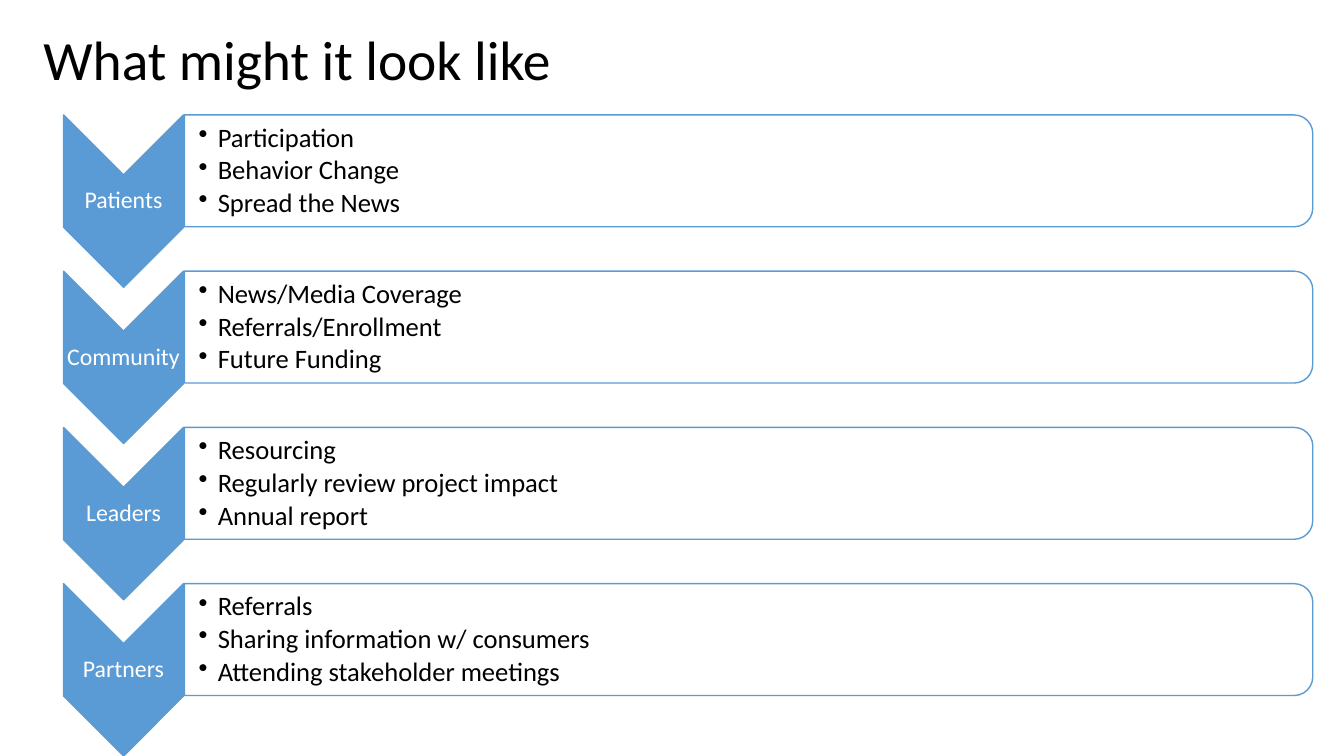
from dataclasses import dataclass

from lxml.etree import SubElement
from pptx import Presentation
from pptx.dml.color import RGBColor
from pptx.enum.shapes import MSO_SHAPE as Preset
from pptx.enum.text import MSO_ANCHOR as Anchor, PP_ALIGN as Align
from pptx.oxml.ns import qn
from pptx.util import Inches, Pt


@dataclass(frozen=True)
class Theme:
    """Colours, font and type sizes of the slide."""
    font: str = "Calibri"
    accent: RGBColor = RGBColor(0x5B, 0x9B, 0xD5)
    white: RGBColor = RGBColor(0xFF, 0xFF, 0xFF)
    black: RGBColor = RGBColor(0, 0, 0)
    title_size: float = 39.6
    label_size: float = 17
    bullet_size: float = 19


THEME = Theme()
ROW_TOP = 1.14
ROW_PITCH = 1.55
AUDIENCES = [
    ("Patients", ["Participation", "Behavior Change", "Spread the News"]),
    ("Community", ["News/Media Coverage", "Referrals/Enrollment", "Future Funding"]),
    ("Leaders", ["Resourcing", "Regularly review project impact", "Annual report"]),
    ("Partners", ["Referrals", "Sharing information w/ consumers",
                  "Attending stakeholder meetings"]),
]


def write_run(paragraph, text, size, color):
    """Add one formatted run to a paragraph."""
    paragraph.line_spacing = 0.9
    run = paragraph.add_run()
    run.text = text
    run.font.name = THEME.font
    run.font.size = Pt(size)
    run.font.color.rgb = color


def set_space_after(paragraph, percent):
    """Set the space after a paragraph as a share of its line."""
    after = SubElement(paragraph._p.get_or_add_pPr(), qn("a:spcAft"))
    SubElement(after, qn("a:spcPct"), val=str(percent * 1000))


def set_bullet(paragraph):
    """Give a paragraph a round bullet with a hanging indent."""
    properties = paragraph._p.get_or_add_pPr()
    indent = Inches(0.19)
    properties.set("marL", str(indent))
    properties.set("indent", str(-indent))
    SubElement(properties, qn("a:buChar"), char="•")


def add_turned_shape(group, preset, left, top, width, height, fill):
    """Add a preset shape turned by 90 degrees, placed by its visible box."""
    shift = (width - height) / 2
    shape = group.shapes.add_shape(preset, Inches(left + shift), Inches(top - shift),
                                   Inches(height), Inches(width))
    shape.rotation = 90
    shape.shadow.inherit = False
    shape.fill.solid()
    shape.fill.fore_color.rgb = fill
    shape.line.color.rgb = THEME.accent
    shape.line.width = Pt(1)
    return shape


def add_text_frame(group, left, top, width, height, left_inset=0.01):
    """Add a wrapped, vertically centred text box and return its frame."""
    box = group.shapes.add_textbox(Inches(left), Inches(top), Inches(width), Inches(height))
    frame = box.text_frame
    frame.word_wrap = True
    frame.vertical_anchor = Anchor.MIDDLE
    frame.margin_left = Inches(left_inset)
    frame.margin_top = frame.margin_right = frame.margin_bottom = Inches(0.01)
    return frame


def add_audience_label(group, top, audience):
    """Add the downward chevron that names an audience."""
    add_turned_shape(group, Preset.CHEVRON, 0.63, top, 1.19, 1.71, THEME.accent)
    label = add_text_frame(group, 0.63, top + 0.6, 1.19, 0.51).paragraphs[0]
    label.alignment = Align.CENTER
    write_run(label, audience, THEME.label_size, THEME.white)
    set_space_after(label, 35)


def add_audience_points(group, top, points):
    """Add the rounded panel with the bullets of an audience."""
    panel = add_turned_shape(group, Preset.ROUND_2_SAME_RECTANGLE, 1.83, top,
                             11.19, 1.11, THEME.white)
    panel_color = panel.fill._xPr.find(qn("a:solidFill"))[0]
    SubElement(panel_color, qn("a:alpha"), val="90000")
    frame = add_text_frame(group, 1.82, top + 0.06, 11.14, 1, left_inset=0.15)
    for index, point in enumerate(points):
        bullet = frame.add_paragraph() if index else frame.paragraphs[0]
        bullet.level = 1
        write_run(bullet, point, THEME.bullet_size, THEME.black)
        set_space_after(bullet, 15)
        set_bullet(bullet)


def set_title(slide, text):
    """Place and format the title placeholder."""
    title = slide.shapes.title
    title.left, title.top = Inches(0.33), Inches(0.25)
    title.width, title.height = Inches(12.4), Inches(0.75)
    title.text_frame.vertical_anchor = Anchor.MIDDLE
    heading = title.text_frame.paragraphs[0]
    heading.alignment = Align.LEFT
    write_run(heading, text, THEME.title_size, THEME.black)


def main():
    """Build the slide and save it."""
    deck = Presentation()
    deck.slide_width, deck.slide_height = Inches(13.33), Inches(7.5)
    slide = deck.slides.add_slide(deck.slide_layouts[5])
    set_title(slide, "What might it look like")
    chevron_list = slide.shapes.add_group_shape()
    for row, (audience, points) in enumerate(AUDIENCES):
        top = ROW_TOP + row * ROW_PITCH
        add_audience_label(chevron_list, top, audience)
        add_audience_points(chevron_list, top, points)
    deck.save("out.pptx")


if __name__ == "__main__":
    main()
